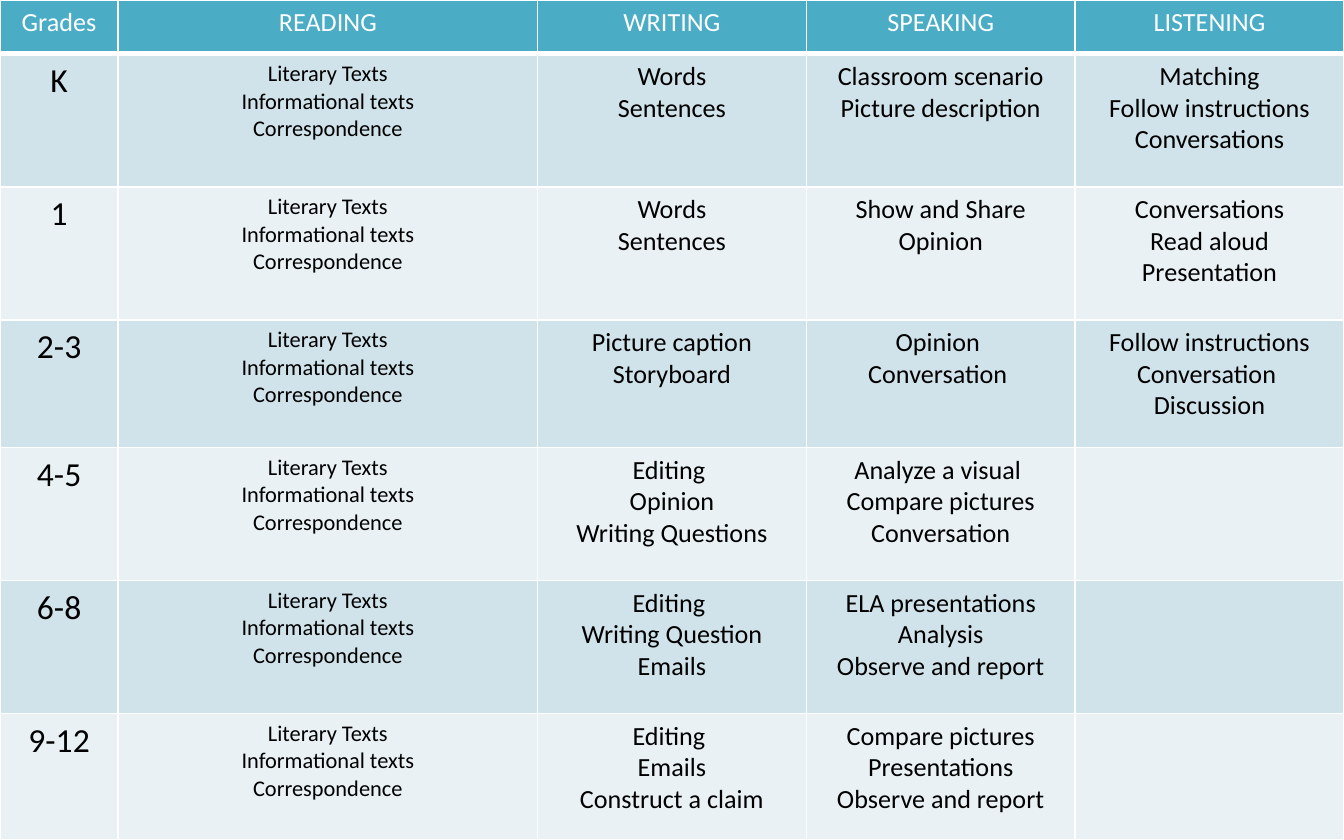
from pptx import Presentation
from pptx.dml.color import RGBColor
from pptx.enum.text import PP_ALIGN
from pptx.oxml import parse_xml
from pptx.oxml.ns import nsdecls
from pptx.util import Inches, Pt

WHITE = RGBColor(0xFF, 0xFF, 0xFF)
BLACK = RGBColor(0x00, 0x00, 0x00)
TEAL = RGBColor(0x4B, 0xAC, 0xC6)
BAND_DARK = RGBColor(0xD0, 0xE3, 0xEA)
BAND_LIGHT = RGBColor(0xE9, 0xF1, 0xF5)

COL_SHARES = [0.088, 0.312, 0.2, 0.2, 0.2]
ROW_HEIGHTS = [0.4, 0.99, 0.99, 0.95, 0.99, 0.99, 0.94]
COL_SIZES = [18, 12, 14, 14, 14]
HEADER_SIZE = 14

HEADERS = ["Grades", "READING", "WRITING", "SPEAKING", "LISTENING"]
READING = ["Literary Texts", "Informational texts", "Correspondence"]
# Grade, then the writing, speaking and listening tasks
GRADES = [
    ("K", ["Words", "Sentences"],
     ["Classroom scenario", "Picture description"],
     ["Matching", "Follow instructions", "Conversations"]),
    ("1", ["Words", "Sentences"],
     ["Show and Share", "Opinion"],
     ["Conversations", "Read aloud", "Presentation"]),
    ("2-3", ["Picture caption", "Storyboard"],
     ["Opinion ", "Conversation "],
     ["Follow instructions", "Conversation ", "Discussion"]),
    ("4-5", ["Editing ", "Opinion", "Writing Questions"],
     ["Analyze a visual ", "Compare pictures", "Conversation"], []),
    ("6-8", ["Editing ", "Writing Question", "Emails"],
     ["ELA presentations", "Analysis", "Observe and report"], []),
    ("9-12", ["Editing ", "Emails", "Construct a claim"],
     ["Compare pictures", "Presentations", "Observe and report"], []),
]


class Deck:
    font = "Calibri"

    def __init__(self, width, height):
        self.prs = Presentation()
        self.prs.slide_width, self.prs.slide_height = Inches(width), Inches(height)
        self.s = self.prs.slides.add_slide(self.prs.slide_layouts[6])

    def table(self, col_shares, row_heights):
        """Add a table that fills the slide."""
        width, height = self.prs.slide_width, self.prs.slide_height
        table = self.s.shapes.add_table(
            len(row_heights), len(col_shares), 0, 0, width, height).table
        for col, share in zip(table.columns, col_shares):
            col.width = round(width * share)
        for row, row_height in zip(table.rows, row_heights):
            row.height = round(height * row_height / sum(row_heights))
        return table

    def cell(self, cell, lines, size, color, fill, bottom=1):
        tf = cell.text_frame
        for i, line in enumerate(lines):
            p = tf.add_paragraph() if i else tf.paragraphs[0]
            p.alignment = PP_ALIGN.CENTER
            r = p.add_run()
            r.text = line
            r.font.name, r.font.size = self.font, Pt(size)
            r.font.bold = False
            r.font.color.rgb = color
        self.borders(cell, bottom)
        cell.fill.solid()
        cell.fill.fore_color.rgb = fill

    def borders(self, cell, bottom):
        tc_pr = cell._tc.get_or_add_tcPr()
        for side, width in (("L", 1), ("R", 1), ("T", 1), ("B", bottom)):
            tc_pr.append(parse_xml(
                f'<a:ln{side} {nsdecls("a")} w="{Pt(width)}"><a:solidFill>'
                f'<a:srgbClr val="{WHITE}"/></a:solidFill></a:ln{side}>'))


def main():
    deck = Deck(10, 6.25)
    table = deck.table(COL_SHARES, ROW_HEIGHTS)
    for c, header in enumerate(HEADERS):
        deck.cell(table.cell(0, c), [header], HEADER_SIZE, WHITE, TEAL, bottom=3)
    for r, (grade, *tasks) in enumerate(GRADES, 1):
        fill = BAND_DARK if r % 2 else BAND_LIGHT
        for c, lines in enumerate([[grade], READING, *tasks]):
            deck.cell(table.cell(r, c), lines, COL_SIZES[c], BLACK, fill)
    deck.prs.save("out.pptx")


if __name__ == "__main__":
    main()
